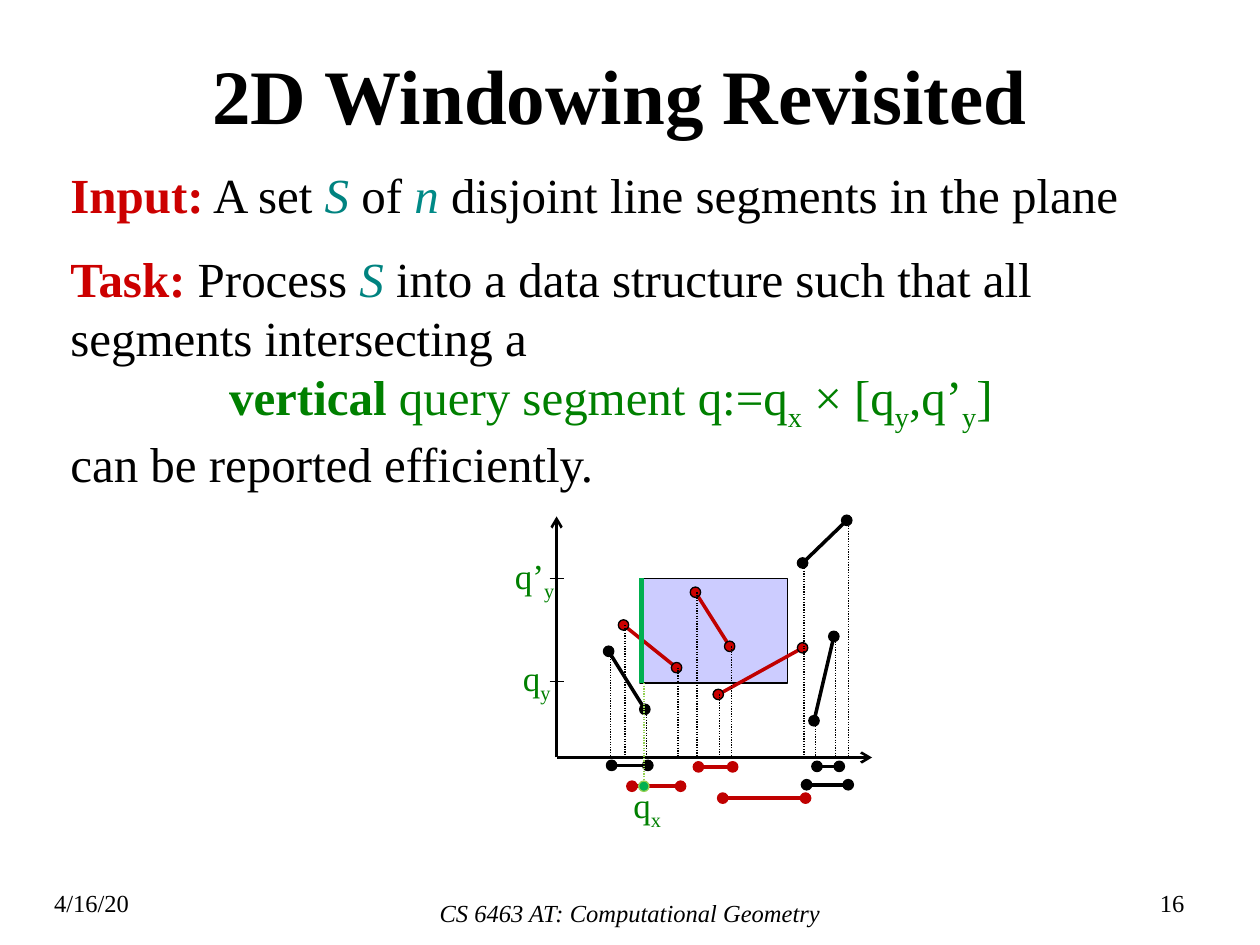
import pptx
import pptx.dml.color
import pptx.enum.dml
import pptx.enum.shapes
import pptx.enum.text
import pptx.oxml.ns
import pptx.util
from lxml import etree

Cm, Pt = pptx.util.Cm, pptx.util.Pt
RGBColor = pptx.dml.color.RGBColor
SHAPE = pptx.enum.shapes.MSO_SHAPE
ALIGN = pptx.enum.text.PP_ALIGN
ANCHOR = pptx.enum.text.MSO_ANCHOR

FONT = "Times New Roman"
BLACK = RGBColor(0x00, 0x00, 0x00)
RED = RGBColor(0xCC, 0x00, 0x00)
DARK_RED = RGBColor(0xC0, 0x00, 0x00)
TEAL = RGBColor(0x00, 0x83, 0x80)
DARK_TEAL = RGBColor(0x00, 0x8A, 0x87)
TEXT_GREEN = RGBColor(0x00, 0x80, 0x00)
QUERY_GREEN = RGBColor(0x00, 0xB0, 0x50)
LIGHT_GREEN = RGBColor(0x92, 0xD0, 0x50)
WINDOW_BLUE = RGBColor(0xCC, 0xCC, 0xFF)

# A run is (text, colour, style); style letters: b bold, i italic, s subscript.
INPUT = [[("Input:", RED, "b"), (" A set ", BLACK, ""), ("S", TEAL, "i"), (" of ", BLACK, ""),
          ("n", DARK_TEAL, "i"), (" disjoint line segments in the plane", BLACK, "")]]
TASK = [
    [("Task:", RED, "b"), (" Process ", BLACK, ""), ("S", TEAL, "i"),
     (" into a data structure such that all segments intersecting a", BLACK, "")],
    [("vertical", TEXT_GREEN, "b"), (" query segment q:=q", TEXT_GREEN, ""),
     ("x", TEXT_GREEN, "s"), (" × [q", TEXT_GREEN, ""), ("y", TEXT_GREEN, "s"),
     (",q’", TEXT_GREEN, ""), ("y", TEXT_GREEN, "s"), ("]", TEXT_GREEN, "")],
    [("can be reported efficiently.", BLACK, "")],
]
QUERY_INDENT = 3.2

# Box (left, top, width, height) in cm, then the base letter and the subscript.
AXIS_LABELS = [
    ((12.52, 15.67, 1.12, 1.12), "q", "x"),
    ((10.29, 13.11, 1.12, 1.12), "q", "y"),
    ((10.13, 11.05, 1.35, 1.12), "q’", "y"),
]

# Start, end, then the projection below the axis (left, right, height), in cm.
MISSED_SEGMENTS = [
    ((12.27, 13.13), (13.0, 14.3), (12.33, 13.06, 15.43)),
    ((16.18, 11.35), (17.07, 10.49), (16.26, 17.1, 15.82)),
    ((16.81, 12.83), (16.41, 14.53), (16.47, 16.92, 15.45)),
]
HIT_SEGMENTS = [
    ((12.57, 12.6), (13.64, 13.46), (12.74, 13.72, 15.85)),
    ((14.02, 11.94), (14.71, 13.03), (14.08, 14.77, 15.46)),
    ((14.48, 14.0), (16.18, 13.06), (14.57, 16.24, 16.09)),
]
ORIGIN = (11.22, 15.27)
AXIS_ENDS = [(11.22, 10.41), (17.58, 15.27)]
WINDOW = (12.9, 11.66, 2.97, 2.11)
QUERY_X, QUERY_TOP, QUERY_BOTTOM = 12.93, 11.66, 13.77
QUERY_POINT = (12.98, 15.85)
TICK_HEIGHTS = (QUERY_TOP, 13.74)
DOT = 0.21


def add_text(slide, box, paragraphs, size, align=ALIGN.LEFT, wrap=False):
    frame = slide.shapes.add_textbox(*map(Cm, box)).text_frame
    frame.word_wrap = wrap
    for index, runs in enumerate(paragraphs):
        paragraph = frame.paragraphs[0] if index == 0 else frame.add_paragraph()
        paragraph.alignment = align
        for text, color, style in runs:
            run = paragraph.add_run()
            run.text = text
            run.font.name, run.font.size = FONT, Pt(size)
            run.font.color.rgb = color
            run.font.bold, run.font.italic = "b" in style, "i" in style
            if "s" in style:
                run.font._element.set("baseline", "-25000")
    return frame


def add_shape(slide, kind, box, fill, outline):
    shape = slide.shapes.add_shape(kind, *map(Cm, box))
    shape.shadow.inherit = False
    shape.fill.solid()
    shape.fill.fore_color.rgb = fill
    shape.line.color.rgb = outline
    shape.line.width = Pt(0.75)


def add_dot(slide, center, fill, outline):
    x, y = center
    add_shape(slide, SHAPE.OVAL, (x - DOT / 2, y - DOT / 2, DOT, DOT), fill, outline)


def add_line(slide, start, end, color, width, dotted=False, arrow=False):
    connector = slide.shapes.add_connector(
        pptx.enum.shapes.MSO_CONNECTOR.STRAIGHT, *map(Cm, start + end))
    connector.line.color.rgb = color
    connector.line.width = Pt(width)
    if dotted:
        connector.line.dash_style = pptx.enum.dml.MSO_LINE.ROUND_DOT
    if arrow:
        etree.SubElement(connector.line._get_or_add_ln(),
                         pptx.oxml.ns.qn("a:tailEnd"), type="arrow")
    etree.SubElement(connector._element.spPr, pptx.oxml.ns.qn("a:effectLst"))


def add_segment(slide, start, end, line_color, fill, outline):
    add_line(slide, start, end, line_color, 2)
    for center in (start, end):
        add_dot(slide, center, fill, outline)


def add_diagram(slide):
    for end in AXIS_ENDS:
        add_line(slide, ORIGIN, end, BLACK, 1.5, arrow=True)
    for y in TICK_HEIGHTS:
        add_line(slide, (ORIGIN[0] - 0.14, y), (ORIGIN[0] + 0.14, y), BLACK, 1)
    add_shape(slide, SHAPE.RECTANGLE, WINDOW, WINDOW_BLUE, BLACK)

    drop_tops = {}
    groups = [(MISSED_SEGMENTS, BLACK, BLACK), (HIT_SEGMENTS, DARK_RED, RED)]
    for segments, line_color, fill in groups:
        for start, end, (left, right, height) in segments:
            add_segment(slide, start, end, line_color, fill, BLACK)
            add_segment(slide, (left, height), (right, height),
                        line_color, line_color, line_color)
            for x, y in (start, end):
                drop_tops[x] = min(y, drop_tops.get(x, y))
    for x, top in drop_tops.items():
        add_line(slide, (x + 0.03, top), (x + 0.03, ORIGIN[1]), BLACK, 0.75, dotted=True)

    add_line(slide, (QUERY_X, QUERY_TOP), (QUERY_X, QUERY_BOTTOM), QUERY_GREEN, 3.25)
    add_line(slide, (QUERY_POINT[0], QUERY_BOTTOM), QUERY_POINT, LIGHT_GREEN, 0.75, dotted=True)
    add_dot(slide, QUERY_POINT, QUERY_GREEN, LIGHT_GREEN)
    for box, letter, subscript in AXIS_LABELS:
        add_text(slide, box, [[(letter, TEXT_GREEN, ""), (subscript, TEXT_GREEN, "s")]], 20)


def main():
    presentation = pptx.Presentation()
    presentation.slide_width, presentation.slide_height = Cm(25.4), Cm(19.05)
    slide = presentation.slides.add_slide(presentation.slide_layouts[6])

    add_text(slide, (23.04, 17.78, 1.09, 0.84), [[("16", BLACK, "")]], 14, ALIGN.RIGHT)
    add_text(slide, (0.84, 17.78, 2.03, 0.86), [[("4/16/20", BLACK, "")]], 14)
    add_text(slide, (8.2, 17.98, 9, 0.86),
             [[("CS 6463 AT: Computational Geometry", BLACK, "i")]], 14, ALIGN.CENTER)

    title = add_text(slide, (4.03, 0.41, 20.96, 3.18),
                     [[("2D Windowing Revisited", BLACK, "b")]], 44, wrap=True)
    title.vertical_anchor = ANCHOR.MIDDLE
    title.paragraphs[0].line_spacing = 0.9

    add_text(slide, (1.17, 3.19, 21.84, 1.45), INPUT, 28)
    task = add_text(slide, (1.17, 4.89, 22.12, 5.05), TASK, 28, wrap=True)
    query_properties = task.paragraphs[1]._p.get_or_add_pPr()
    query_properties.set("marL", str(Cm(QUERY_INDENT)))
    query_properties.set("indent", "0")

    add_diagram(slide)
    presentation.save("out.pptx")


if __name__ == "__main__":
    main()
